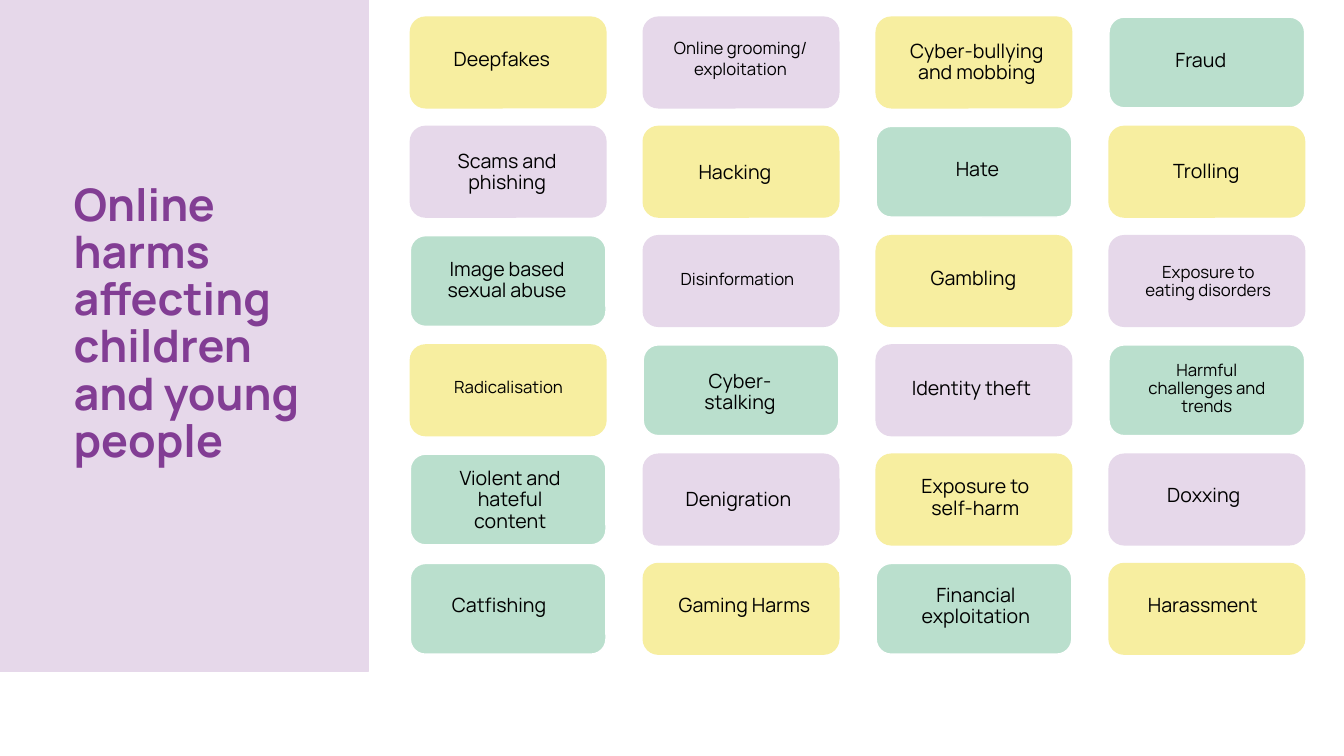
from dataclasses import dataclass

from pptx import Presentation
from pptx.dml.color import RGBColor
from pptx.enum.shapes import MSO_SHAPE as Shape
from pptx.enum.text import MSO_ANCHOR as Anchor, PP_ALIGN as Align
from pptx.util import Inches, Pt


@dataclass(frozen=True)
class Theme:
    font: str = "Manrope"
    lilac: str = "E6D8EA"
    lemon: str = "F7EEA0"
    mint: str = "BADFCD"
    white: str = "FFFFFF"
    purple: str = "823D94"
    black: str = "000000"
    title: int = 32
    large: int = 14
    small: int = 12


theme = Theme()
LILAC, LEMON, MINT = theme.lilac, theme.lemon, theme.mint
LARGE, SMALL = theme.large, theme.small


def paint(shape, fill, line, width):
    shape.shadow.inherit = False
    shape.fill.solid()
    shape.fill.fore_color.rgb = RGBColor.from_string(fill)
    shape.line.color.rgb = RGBColor.from_string(line)
    shape.line.width = Pt(width)


def set_font(para, size, color, bold):
    formats = {"name": theme.font, "size": Pt(size), "bold": bold}
    for span in para.runs:
        for name, value in formats.items():
            setattr(span.font, name, value)
        span.font.color.rgb = RGBColor.from_string(color)


deck = Presentation()
deck.slide_width, deck.slide_height = Inches(13.33), Inches(7.5)
page = deck.slides.add_slide(deck.slide_layouts[5])

# Title panel
title = page.shapes.title
panel = page.shapes.add_shape(Shape.RECTANGLE, 0, 0, Inches(3.65), Inches(6.66))
paint(panel, LILAC, LILAC, 1)
title.element.addprevious(panel.element)

title.left, title.top = Inches(0.63), Inches(1.56)
title.width, title.height = Inches(2.68), Inches(3.33)
title.text_frame.text = "Online harms affecting children and young people"
title.text_frame.word_wrap = True
title.text_frame.vertical_anchor = Anchor.MIDDLE
heading = title.text_frame.paragraphs[0]
heading.alignment = Align.LEFT
heading.line_spacing = 0.88
set_font(heading, theme.title, theme.purple, True)

# Each harm: text, colour, type size, label box (left and top inside the card, width, height)
harms = [
    [
        ("Deepfakes", LEMON, LARGE, (0.2, 0.05, 1.63, 0.75)),
        ("Online grooming/\nexploitation", LILAC, SMALL, (0.07, 0.09, 1.79, 0.66)),
        ("Cyber-bullying and mobbing", LEMON, LARGE, (0.07, 0.09, 1.86, 0.73)),
        ("Fraud", MINT, LARGE, (0.07, 0.09, 1.68, 0.7)),
    ],
    [
        ("Scams and phishing", LILAC, LARGE, (0.07, 0.09, 1.78, 0.74)),
        ("Hacking", LEMON, LARGE, (0.07, 0.09, 1.68, 0.74)),
        ("Hate", MINT, LARGE, (0.07, 0.09, 1.87, 0.69)),
        ("Trolling", LEMON, LARGE, (0.07, 0.09, 1.79, 0.72)),
    ],
    [
        ("Image based sexual abuse", MINT, LARGE, (0.07, 0.09, 1.78, 0.72)),
        ("Disinformation", LILAC, SMALL, (0.1, 0.09, 1.67, 0.7)),
        ("Gambling", LEMON, LARGE, (0.07, 0.09, 1.79, 0.69)),
        ("Exposure to eating disorders", LILAC, SMALL, (0.12, 0.06, 1.73, 0.8)),
    ],
    [
        ("Radicalisation", LEMON, SMALL, (0.1, 0.05, 1.75, 0.75)),
        ("Cyber-stalking", MINT, LARGE, (0.11, 0.11, 1.7, 0.73)),
        ("Identity theft", LILAC, LARGE, (0.07, 0.08, 1.75, 0.72)),
        ("Harmful challenges and trends", MINT, SMALL, (0.07, 0.08, 1.8, 0.72)),
    ],
    [
        ("Violent and hateful content", MINT, LARGE, (0.07, 0.09, 1.84, 0.74)),
        ("Denigration", LILAC, LARGE, (0.07, 0.13, 1.75, 0.66)),
        ("Exposure to self-harm", LEMON, LARGE, (0.07, 0.09, 1.83, 0.69)),
        ("Doxxing", LILAC, LARGE, (0.07, 0.09, 1.74, 0.65)),
    ],
    [
        ("Catfishing", MINT, LARGE, (0.07, 0.09, 1.62, 0.66)),
        ("Gaming Harms", LEMON, LARGE, (0.07, 0.09, 1.87, 0.66)),
        ("Financial exploitation", MINT, LARGE, (0.07, 0.09, 1.84, 0.68)),
        ("Harassment", LEMON, LARGE, (0.07, 0.09, 1.72, 0.67)),
    ],
]
label_format = {
    "word_wrap": True,
    "vertical_anchor": Anchor.MIDDLE,
    "margin_left": Inches(0.23),
    "margin_right": Inches(0.23),
    "margin_top": 0,
    "margin_bottom": 0,
}
first_left, column_step = 4.07, 2.31
first_top, last_top = 0.17, 5.59
row_step = (last_top - first_top) / (len(harms) - 1)

for row, row_harms in enumerate(harms):
    for column, (text, color, size, (inset, drop, width, height)) in enumerate(row_harms):
        left, top = first_left + column * column_step, first_top + row * row_step
        tile = page.shapes.add_group_shape()
        card = tile.shapes.add_shape(
            Shape.ROUNDED_RECTANGLE, Inches(left), Inches(top), Inches(1.94), Inches(0.9)
        )
        paint(card, color, theme.white if color == MINT else color, 1)

        label = tile.shapes.add_textbox(
            Inches(left + inset), Inches(top + drop), Inches(width), Inches(height)
        )
        if color != MINT:
            paint(label, color, color, 0.75)
        frame = label.text_frame
        for name, value in label_format.items():
            setattr(frame, name, value)
        frame.text = text
        for index, para in enumerate(frame.paragraphs):
            para.alignment = Align.LEFT if text == "Deepfakes" else Align.CENTER
            para.line_spacing = 0.9
            if index:
                para.space_before = Pt(2.4)
            set_font(para, size, theme.black, False)

deck.save("out.pptx")
